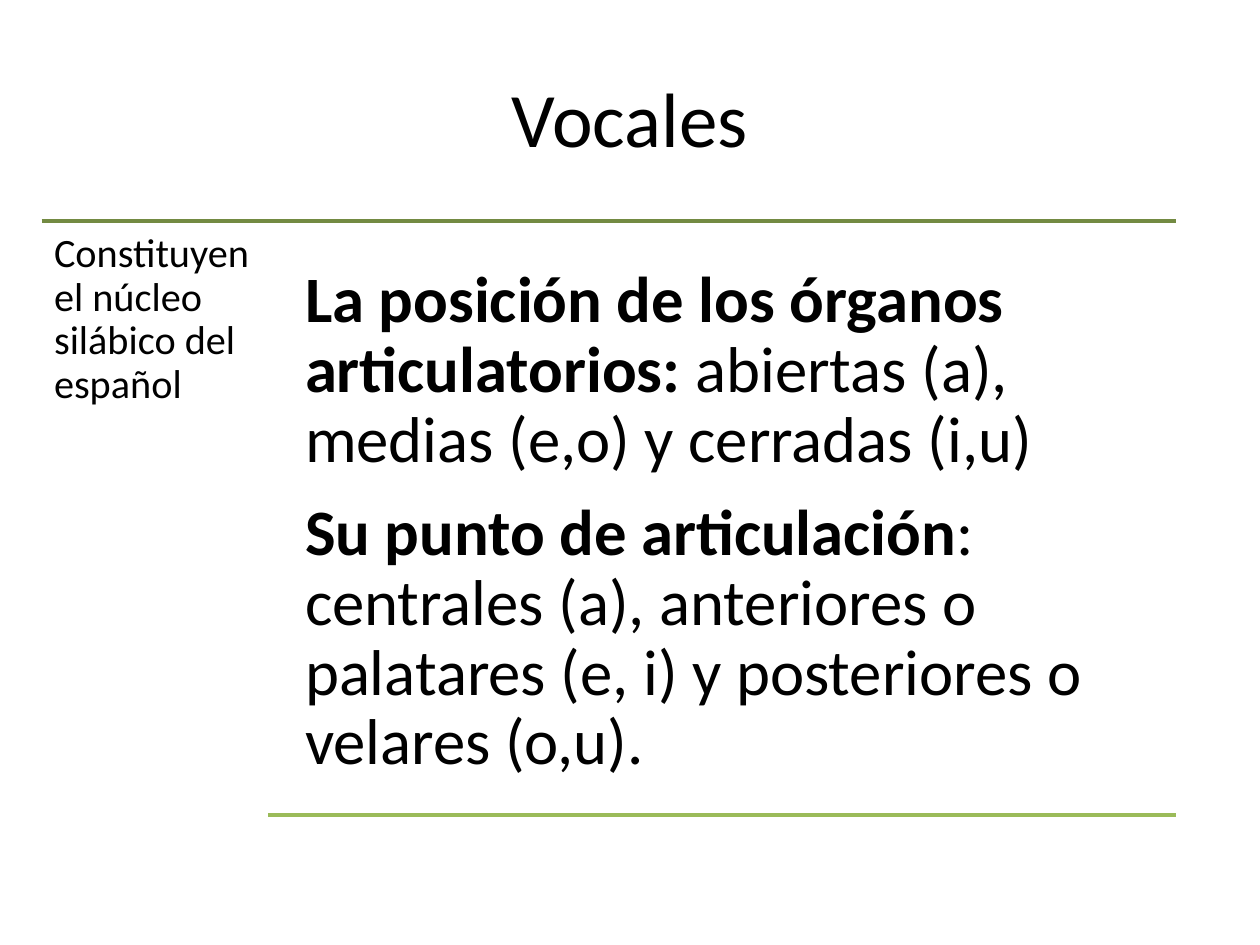
"""Build the slide on Spanish vowels."""
from lxml import etree
from pptx import Presentation
from pptx.dml.color import RGBColor
from pptx.enum.shapes import MSO_CONNECTOR
from pptx.enum.text import MSO_ANCHOR, PP_ALIGN
from pptx.oxml.ns import qn
from pptx.util import Cm, Pt

STRAIGHT = MSO_CONNECTOR.STRAIGHT
TOP, MIDDLE = MSO_ANCHOR.TOP, MSO_ANCHOR.MIDDLE
CENTER = PP_ALIGN.CENTER
FONT = "Calibri"
COLORS = {"text": "000000", "dark": "738A42", "light": "9BBB59"}
LEFT, RIGHT, RULE = 0.84, 23.7, 4.45
NOTE = [[("Constituyen el núcleo silábico del español", False)]]
TRAITS = [
    [("La posición de los órganos articulatorios: ", True),
     ("abiertas (a), medias (e,o) y cerradas (i,u)", False)],
    [("Su punto de articulación", True),
     (": centrales (a), anteriores o palatares (e, i) y posteriores o velares (o,u).", False)],
]


def color(name):
    """Return a named colour."""
    return RGBColor.from_string(COLORS[name])


def style(font, size):
    """Set the face, size and colour of a font."""
    font.name, font.size = FONT, Pt(size)
    font.color.rgb = color("text")


def add_title(slide, text):
    """Place and format the title."""
    title = slide.shapes.title
    title.left, title.top, title.width, title.height = Cm(1.27), Cm(0.76), Cm(22.86), Cm(3.18)
    frame = title.text_frame
    frame.text, frame.vertical_anchor = text, MIDDLE
    para = frame.paragraphs[0]
    para.alignment = CENTER
    style(para.font, 44)


def add_rule(slide, left, top, name):
    """Draw a level line to the right edge."""
    line = slide.shapes.add_connector(STRAIGHT, Cm(left), Cm(top), Cm(RIGHT), Cm(top))
    line.line.color.rgb = color(name)
    line.line.width = Pt(2)
    etree.SubElement(line._element.spPr, qn("a:effectLst"))


def add_text(slide, box, inset, size, paras):
    """Add a text box of paragraphs made of (text, bold) runs."""
    frame = slide.shapes.add_textbox(*map(Cm, box)).text_frame
    frame.word_wrap, frame.vertical_anchor = True, TOP
    frame.margin_left = frame.margin_right = Cm(inset)
    frame.margin_top = frame.margin_bottom = Cm(inset)
    for i, runs in enumerate(paras):
        para = frame.add_paragraph() if i else frame.paragraphs[0]
        para.line_spacing = 0.9
        para.space_after = Pt(round(size * 0.35))
        style(para.font, size)
        for text, bold in runs:
            run = para.add_run()
            run.text, run.font.bold = text, bold


def main():
    """Build and save the slide."""
    deck = Presentation()
    deck.slide_width, deck.slide_height = Cm(25.4), Cm(19.05)
    slide = deck.slides.add_slide(deck.slide_layouts[5])
    add_title(slide, "Vocales")
    add_rule(slide, LEFT, RULE, "dark")
    add_text(slide, (LEFT, RULE, 4.57, 12.57), 0.25, 23, NOTE)
    add_text(slide, (5.77, 5, 17.96, 11.43), 0.38, 37, TRAITS)
    add_rule(slide, 5.41, 16.43, "light")
    deck.save("out.pptx")


if __name__ == "__main__":
    main()
